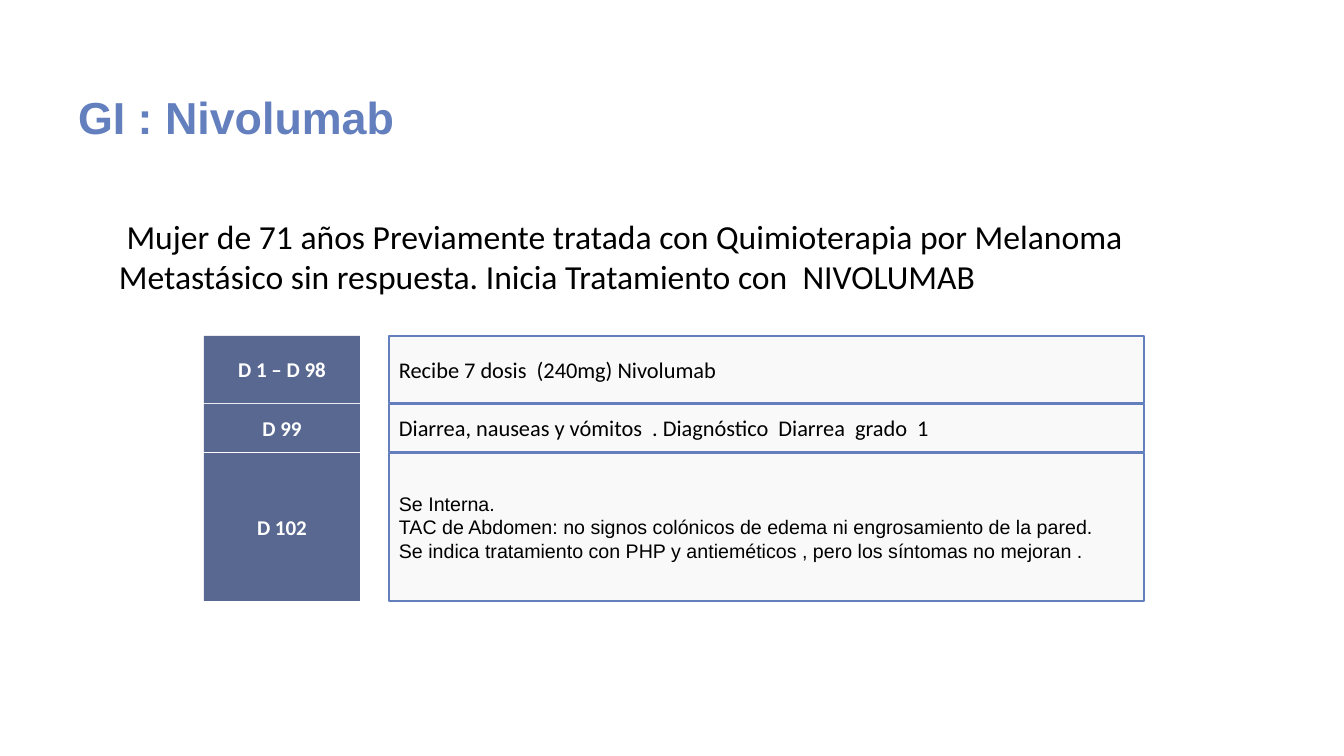
from lxml import etree
from pptx import Presentation
from pptx.dml.color import RGBColor
from pptx.enum.shapes import MSO_SHAPE
from pptx.enum.text import MSO_ANCHOR, MSO_AUTO_SIZE, PP_ALIGN
from pptx.oxml.ns import qn
from pptx.util import Emu, Pt

PX_PER_INCH = 100.8
BLUE = RGBColor(0x64, 0x7F, 0xBE)
SLATE = RGBColor(0x59, 0x68, 0x90)
PALE = RGBColor(0xF9, 0xF9, 0xF9)
BLACK = RGBColor(0, 0, 0)
WHITE = RGBColor(255, 255, 255)

# Day label, row height, font name, font size, events
TIMELINE = [
    ("D 1 – D 98", 67, "Calibri", 16, ["Recibe 7 dosis  (240mg) Nivolumab"]),
    ("D 99", 48, "Calibri", 16,
     ["Diarrea, nauseas y vómitos  . Diagnóstico  Diarrea  grado  1"]),
    ("D 102", 148, "Arial", 14, [
        "Se Interna.",
        "TAC de Abdomen: no signos colónicos de edema ni engrosamiento de la pared.",
        "Se indica tratamiento con PHP y antieméticos , pero los síntomas no mejoran .",
    ]),
]


def px(length):
    return Emu(round(length * 914400 / PX_PER_INCH))


def write(shape, lines, font_name, size, color, bold=False,
          align=PP_ALIGN.LEFT, anchor=MSO_ANCHOR.MIDDLE):
    frame = shape.text_frame
    frame.word_wrap = True
    frame.auto_size = MSO_AUTO_SIZE.NONE
    frame.vertical_anchor = anchor
    frame.text = "\n".join(lines)
    for paragraph in frame.paragraphs:
        paragraph.alignment = align
        font = paragraph.font
        font.name, font.size, font.bold = font_name, Pt(size), bold
        font.color.rgb = color


def add_title(slide, left, top, width, height):
    title = slide.shapes.title
    title.left, title.top = px(left), px(top)
    title.width, title.height = px(width), px(height)
    write(title, ["GI : Nivolumab"], "Arial", 32, BLUE, bold=True)
    title.text_frame.paragraphs[0].line_spacing = 0.9


def add_case_summary(slide, left, top, width, height):
    box = slide.shapes.add_textbox(px(left), px(top), px(width), px(height))
    text = (" Mujer de 71 años Previamente tratada con Quimioterapia por Melanoma "
            "Metastásico sin respuesta. Inicia Tratamiento con  NIVOLUMAB")
    box.text_frame.text = text
    # Hanging bullet
    properties = box.text_frame.paragraphs[0]._p.get_or_add_pPr()
    properties.set("marL", str(px(30)))
    properties.set("indent", str(-px(30)))
    bullet_font = etree.SubElement(properties, qn("a:buFont"))
    bullet_font.set("typeface", "Arial")
    bullet = etree.SubElement(properties, qn("a:buChar"))
    bullet.set("char", "•")
    write(box, [text], "Calibri", 24, BLACK, anchor=MSO_ANCHOR.TOP)


def add_cell(slide, left, top, width, height, fill, line=None):
    cell = slide.shapes.add_shape(
        MSO_SHAPE.RECTANGLE, px(left), px(top), px(width), px(height))
    cell.shadow.inherit = False
    cell.fill.solid()
    cell.fill.fore_color.rgb = fill
    if line is None:
        cell.line.fill.background()
    else:
        cell.line.color.rgb = line
        cell.line.width = Pt(1)
    return cell


def add_timeline(slide, left, top, width):
    label_width, column_gap, row_gap = 156, 29, 1
    event_offset = label_width + column_gap
    for day, height, font_name, size, events in TIMELINE:
        label = add_cell(slide, left, top, label_width, height, SLATE)
        write(label, [day], "Calibri", 15, WHITE, bold=True, align=PP_ALIGN.CENTER)
        event = add_cell(slide, left + event_offset, top,
                         width - event_offset, height, PALE, BLUE)
        write(event, events, font_name, size, BLACK)
        top += height + row_gap


def main():
    presentation = Presentation()
    presentation.slide_width, presentation.slide_height = px(1344), px(756)
    slide = presentation.slides.add_slide(presentation.slide_layouts[5])
    add_title(slide, 68, 102, 1104, 36)
    add_case_summary(slide, 109, 211, 1091, 92)
    add_timeline(slide, 204, 336, 940)
    presentation.save("out.pptx")


if __name__ == "__main__":
    main()
